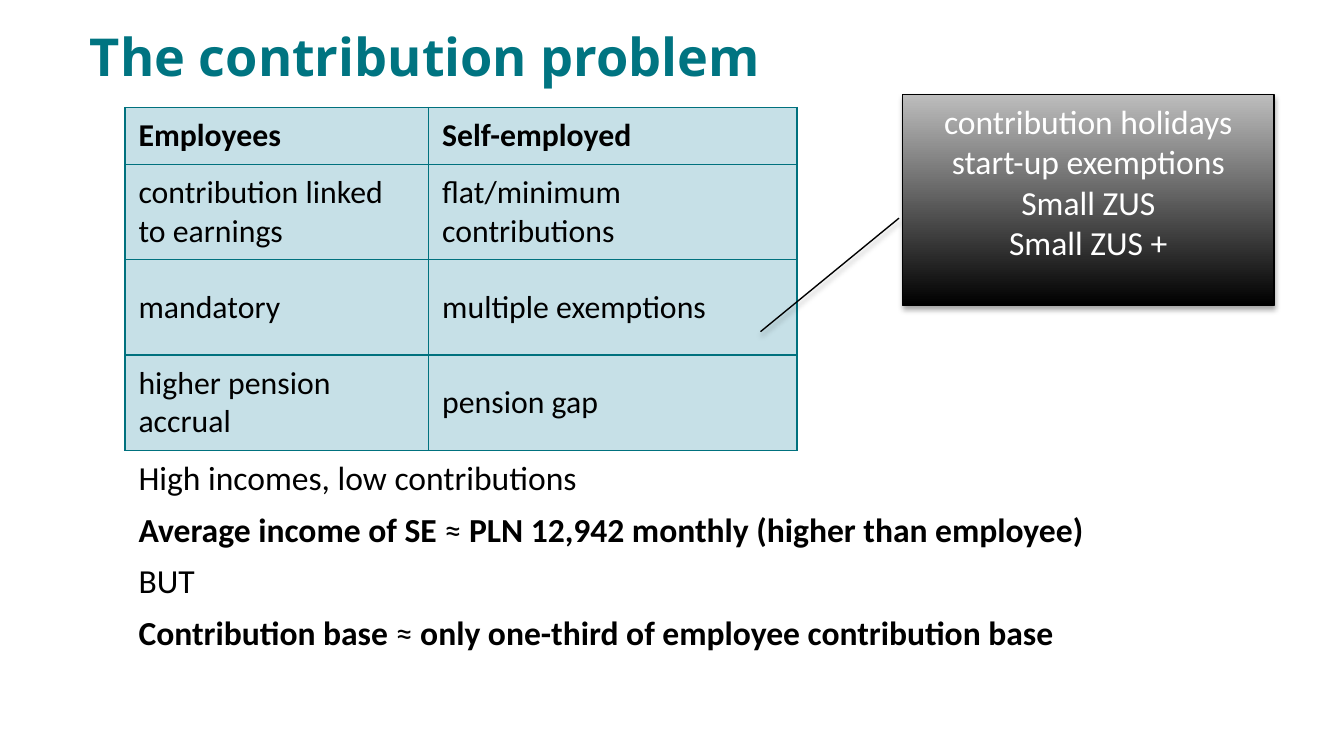
from lxml.etree import SubElement
from pptx import Presentation
from pptx.dml.color import RGBColor
from pptx.enum.shapes import MSO_SHAPE
from pptx.enum.text import MSO_ANCHOR, MSO_AUTO_SIZE, PP_ALIGN
from pptx.oxml.ns import qn
from pptx.util import Pt

TITLE = "The contribution problem"
COMPARISON = [
    ("Employees", "Self-employed"),
    ("contribution linked to earnings", "flat/minimum contributions"),
    ("mandatory", "multiple exemptions"),
    ("higher pension accrual", "pension gap"),
]
COLUMN_WIDTHS = [162.7, 197.3]
ROW_HEIGHTS = [30.6, 51, 51, 51]
FINDINGS = [
    [("High incomes, low contributions", False)],
    [("Average income of SE ", True), ("≈ ", False),
     ("PLN 12,942 monthly (higher than employee)", True)],
    [("BUT", False)],
    [("Contribution base ", True), ("≈ ", False),
     ("only one-third of employee contribution base", True)],
]
EXEMPTIONS = ["contribution holidays", "start-up exemptions", "Small ZUS", "Small ZUS +"]
CALLOUT_POINTS = [0.587, -0.01, 1.125, -0.383]


def color(code):
    return RGBColor.from_string(code)


def add_text(para, text, size=18, font="Calibri", fill="000000", bold=False):
    span = para.add_run()
    span.text = text
    span.font.size = Pt(size)
    span.font.name = font
    span.font.bold = bold
    span.font.color.rgb = color(fill)


def place(box, left, top, width, height):
    box.left, box.top, box.width, box.height = Pt(left), Pt(top), Pt(width), Pt(height)


def next_para(frame, index):
    return frame.add_paragraph() if index else frame.paragraphs[0]


def add_borders(cell, code, width):
    properties = cell._tc.get_or_add_tcPr()
    for position, side in enumerate(("lnL", "lnR", "lnT", "lnB")):
        line = properties.makeelement(qn(f"a:{side}"), {"w": str(Pt(width))})
        fill = SubElement(line, qn("a:solidFill"))
        SubElement(fill, qn("a:srgbClr"), val=code)
        properties.insert(position, line)


def add_shadow(shape, code, opacity, blur, distance, angle):
    effects = SubElement(shape._element.spPr, qn("a:effectLst"))
    shadow = SubElement(effects, qn("a:outerShdw"), blurRad=str(Pt(blur)),
                        dist=str(Pt(distance)), dir=str(angle * 60000), rotWithShape="0")
    shade = SubElement(shadow, qn("a:srgbClr"), val=code)
    SubElement(shade, qn("a:alpha"), val=str(opacity * 1000))


def add_title(page):
    box = page.shapes.title
    place(box, 48.2, 13, 612, 53.3)
    frame = box.text_frame
    frame.auto_size = MSO_AUTO_SIZE.NONE
    frame.vertical_anchor = MSO_ANCHOR.TOP
    frame.margin_left = frame.margin_right = frame.margin_top = frame.margin_bottom = 0
    para = frame.paragraphs[0]
    para.alignment = PP_ALIGN.LEFT
    add_text(para, TITLE, size=28, font="Open Sans", fill="007481", bold=True)


def add_comparison(page):
    table = page.shapes.add_table(len(ROW_HEIGHTS), len(COLUMN_WIDTHS), Pt(67), Pt(57.6),
                                  Pt(sum(COLUMN_WIDTHS)), Pt(sum(ROW_HEIGHTS))).table
    table.horz_banding = False
    for column, width in zip(table.columns, COLUMN_WIDTHS):
        column.width = Pt(width)
    for index, (row, height, texts) in enumerate(zip(table.rows, ROW_HEIGHTS, COMPARISON)):
        row.height = Pt(height)
        for cell, text in zip(row.cells, texts):
            cell.vertical_anchor = MSO_ANCHOR.MIDDLE
            cell.fill.solid()
            cell.fill.fore_color.rgb = color("C6E0E7")
            add_borders(cell, "00717E", 0.75)
            add_text(cell.text_frame.paragraphs[0], text, size=17, bold=index == 0)


def add_findings(page):
    box = page.placeholders[1]
    place(box, 67, 241.2, 589.7, 113)
    frame = box.text_frame
    frame.auto_size = MSO_AUTO_SIZE.NONE
    for index, spans in enumerate(FINDINGS):
        para = next_para(frame, index)
        properties = para._p.get_or_add_pPr()
        properties.set("marL", "0")
        properties.set("indent", "0")
        SubElement(properties, qn("a:buNone"))
        para.space_before = Pt(0)
        para.space_after = Pt(6)
        for text, bold in spans:
            add_text(para, text, bold=bold)


def add_callout(page):
    box = page.shapes.add_shape(MSO_SHAPE.LINE_CALLOUT_1, Pt(483.6), Pt(50.6), Pt(198.9), Pt(113))
    for index, value in enumerate(CALLOUT_POINTS):
        box.adjustments[index] = value
    box.fill.gradient()
    box.fill.gradient_angle = 90
    for stop, code, position in zip(box.fill.gradient_stops, ("000000", "BDBDBD"), (0, 1)):
        stop.color.rgb = color(code)
        stop.position = position
    box.line.color.rgb = color("000000")
    box.line.width = Pt(0.75)
    add_shadow(box, "000000", opacity=35, blur=3.1, distance=1.8, angle=90)
    frame = box.text_frame
    frame.word_wrap = True
    frame.vertical_anchor = MSO_ANCHOR.TOP
    for index, text in enumerate(EXEMPTIONS):
        para = next_para(frame, index)
        para.alignment = PP_ALIGN.CENTER
        add_text(para, text, fill="FFFFFF")


def main():
    deck = Presentation()
    deck.slide_width, deck.slide_height = Pt(720), Pt(405)
    page = deck.slides.add_slide(deck.slide_layouts[1])
    add_title(page)
    add_comparison(page)
    add_findings(page)
    add_callout(page)
    deck.save("out.pptx")


if __name__ == "__main__":
    main()
